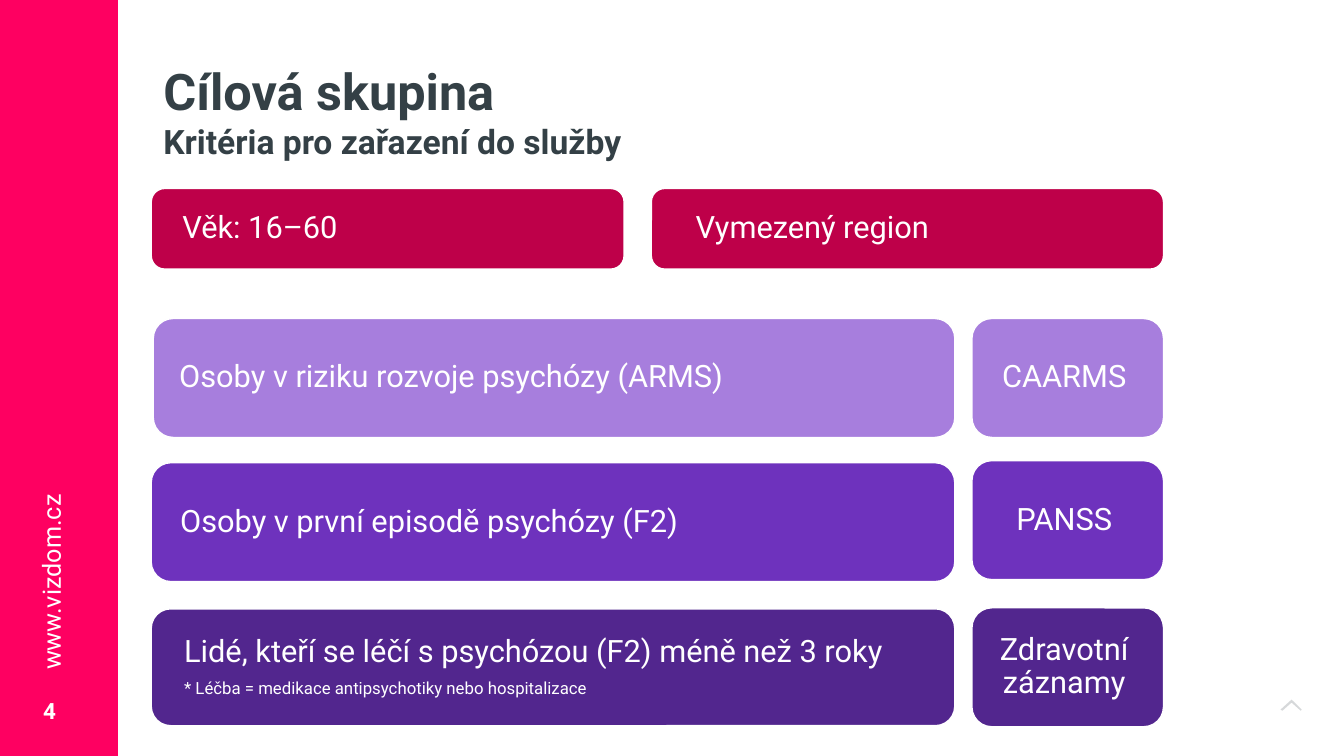
from lxml.etree import SubElement
from pptx import Presentation
from pptx.dml.color import RGBColor
from pptx.enum.shapes import MSO_SHAPE as Shape
from pptx.enum.text import MSO_ANCHOR as Anchor, MSO_AUTO_SIZE as AutoSize, PP_ALIGN as Align
from pptx.oxml.ns import qn
from pptx.util import Inches, Pt

COLORS = {
    "pink": "FE0061",
    "crimson": "BE0049",
    "lilac": "A77EDD",
    "violet": "6E32BD",
    "indigo": "52268E",
    "slate": "344046",
    "white": "FFFFFF",
}


class SlideBuilder:
    font = "Roboto"

    def __init__(self, deck):
        self.page = deck.slides.add_slide(deck.slide_layouts[5])

    def color(self, name):
        return RGBColor.from_string(COLORS[name])

    def fill(self, shape, color):
        shape.shadow.inherit = False
        shape.fill.solid()
        shape.fill.fore_color.rgb = self.color(color)
        shape.line.fill.background()

    def set_text(self, frame, lines, color, bold=False, align=Align.LEFT, spacing=1.0, gap=0):
        frame.word_wrap = True
        frame.auto_size = AutoSize.NONE
        frame.text = "\n".join(text for text, size in lines)
        for index, (para, (text, size)) in enumerate(zip(frame.paragraphs, lines)):
            para.alignment = align
            para.line_spacing = spacing
            para.space_before = Pt(gap if index else 0)
            for span in para.runs:
                span.font.name = self.font
                span.font.size = Pt(size)
                span.font.bold = bold
                span.font.color.rgb = self.color(color)

    def title(self, area, lines):
        box = self.page.shapes.title
        box.left, box.top, box.width, box.height = map(Inches, area)
        box.text_frame.vertical_anchor = Anchor.TOP
        self.set_text(box.text_frame, lines, "slate", bold=True)

    def panel(self, area, color):
        shape = self.page.shapes.add_shape(Shape.RECTANGLE, *map(Inches, area))
        self.fill(shape, color)

    def label(self, area, text, size, bold=False, rotation=0, anchor=Anchor.TOP):
        box = self.page.shapes.add_textbox(*map(Inches, area))
        box.rotation = rotation
        box.text_frame.vertical_anchor = anchor
        self.set_text(box.text_frame, [(text, size)], "white", bold)

    def card(self, area, color, lines, left_inset, right_inset=0.2, align=Align.LEFT):
        shape = self.page.shapes.add_shape(Shape.ROUNDED_RECTANGLE, *map(Inches, area))
        self.fill(shape, color)
        shape.line.color.rgb = self.color("white")
        shape.line.width = Pt(1)
        frame = shape.text_frame
        frame.vertical_anchor = Anchor.MIDDLE
        frame.margin_left, frame.margin_right = Inches(left_inset), Inches(right_inset)
        self.set_text(frame, lines, "white", align=align, spacing=0.9, gap=7.7)

    def chevron(self, points, color, opacity):
        start, *rest = [(Inches(x), Inches(y)) for x, y in points]
        builder = self.page.shapes.build_freeform(*start)
        builder.add_line_segments(rest, close=True)
        shape = builder.convert_to_shape()
        self.fill(shape, color)
        tone = shape.element.spPr.find(qn("a:solidFill"))[0]
        SubElement(tone, qn("a:alpha")).set("val", str(opacity * 1000))


def main():
    deck = Presentation()
    deck.slide_width, deck.slide_height = Inches(13.33), Inches(7.5)
    slide = SlideBuilder(deck)

    slide.chevron(
        [(12.81, 6.94), (12.91, 7.04), (12.9, 7.05), (12.81, 6.97), (12.72, 7.05), (12.7, 7.04)],
        "slate", 20,
    )
    slide.panel((0, 0, 1.17, 7.5), "pink")
    slide.label((0.33, 6.75, 0.5, 0.6), "4", 16, bold=True, anchor=Anchor.MIDDLE)
    slide.label((-0.68, 5.35, 2.38, 0.41), "www.vizdom.cz", 18, rotation=270)
    slide.title(
        (1.52, 0.55, 9.27, 1.11),
        [("Cílová skupina", 36), ("Kritéria pro zařazení do služby", 24)],
    )

    slide.card((1.5, 1.87, 4.69, 0.8), "crimson", [("Věk: 16–60", 22)], 0.27)
    slide.card((6.46, 1.87, 5.08, 0.8), "crimson", [("Vymezený region", 22)], 0.4)

    groups = [
        ("lilac", (1.52, 3.16, 7.95, 1.18), 0.2, [("Osoby v riziku rozvoje psychózy (ARMS)", 22)],
         3.16, "CAARMS"),
        ("violet", (1.5, 4.59, 7.97, 1.18), 0.23, [("Osoby v první episodě psychózy (F2)", 22)],
         4.57, "PANSS"),
        ("indigo", (1.5, 6.04, 7.97, 1.16), 0.27,
         [("Lidé, kteří se léčí s psychózou (F2) méně než 3 roky", 22),
          ("* Léčba = medikace antipsychotiky nebo hospitalizace", 12)],
         6.03, "Zdravotní záznamy"),
    ]
    for color, area, inset, lines, tool_top, tool in groups:
        slide.card(area, color, lines, inset)
        slide.card((9.64, tool_top, 1.9, 1.18), color, [(tool, 22)], 0.14, 0.21, Align.CENTER)

    deck.save("out.pptx")


if __name__ == "__main__":
    main()
